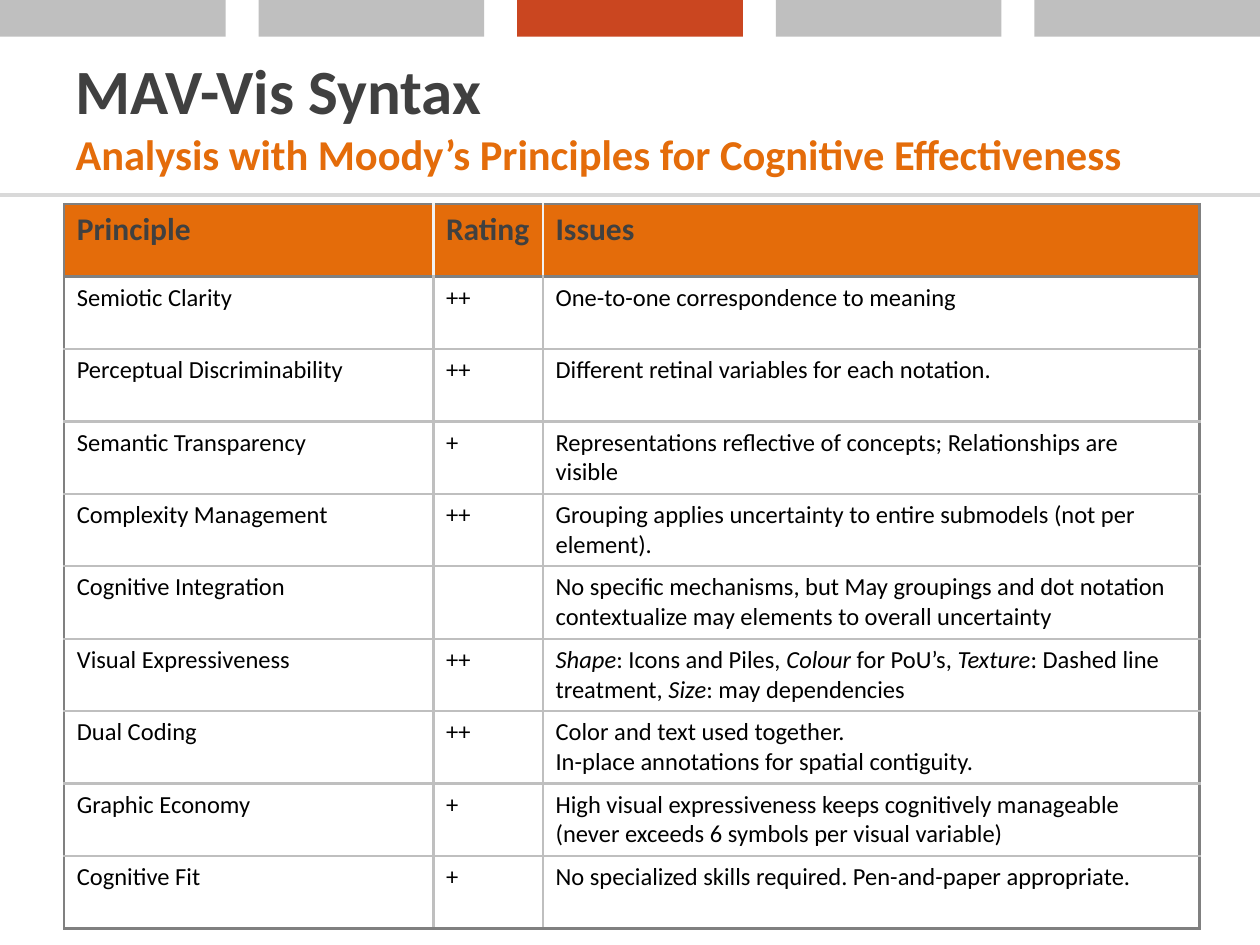
from lxml import etree
from pptx import Presentation
from pptx.dml.color import RGBColor
from pptx.enum.shapes import MSO_CONNECTOR, MSO_SHAPE
from pptx.enum.text import MSO_ANCHOR, PP_ALIGN
from pptx.oxml.ns import qn
from pptx.util import Inches, Pt

STRAIGHT = MSO_CONNECTOR.STRAIGHT
RECTANGLE = MSO_SHAPE.RECTANGLE
MIDDLE = MSO_ANCHOR.MIDDLE
LEFT = PP_ALIGN.LEFT

WHITE = RGBColor(0xFF, 0xFF, 0xFF)
BLACK = RGBColor(0x00, 0x00, 0x00)
DARK_GRAY = RGBColor(0x40, 0x40, 0x40)
FRAME_GRAY = RGBColor(0x80, 0x80, 0x80)
GRID_GRAY = RGBColor(0xBF, 0xBF, 0xBF)
RULE_GRAY = RGBColor(0xD9, 0xD9, 0xD9)
HEADER_GRAY = RGBColor(0xF2, 0xF2, 0xF2)
ORANGE = RGBColor(0xE4, 0x6C, 0x0A)
RED = RGBColor(0xCA, 0x46, 0x20)

# Asterisks enclose italic words; a newline starts a new paragraph.
ROWS = [
    ("Principle", "Rating", "Issues"),
    ("Semiotic Clarity", "++", "One-to-one correspondence to meaning"),
    ("Perceptual Discriminability", "++", "Different retinal variables for each notation."),
    ("Semantic Transparency", "+",
     "Representations reflective of concepts; Relationships are visible"),
    ("Complexity Management", "++",
     "Grouping applies uncertainty to entire submodels (not per element)."),
    ("Cognitive Integration", "",
     "No specific mechanisms, but May groupings and dot notation "
     "contextualize may elements to overall uncertainty"),
    ("Visual Expressiveness", "++",
     "*Shape*: Icons and Piles, *Colour* for PoU’s, *Texture*: Dashed line "
     "treatment, *Size*: may dependencies"),
    ("Dual Coding", "++",
     "Color and text used together.\nIn-place annotations for spatial contiguity."),
    ("Graphic Economy", "+",
     "High visual expressiveness keeps cognitively manageable "
     "(never exceeds 6 symbols per visual variable)"),
    ("Cognitive Fit", "+", "No specialized skills required. Pen-and-paper appropriate."),
]
COLUMN_WIDTHS = [2.93, 0.87, 5.21]
ROW_HEIGHT = 0.575


def add_span(para, text, color, **font_values):
    span = para.add_run()
    span.text = text
    span.font.name = "Calibri"
    span.font.color.rgb = color
    for name, value in font_values.items():
        setattr(span.font, name, value)


def add_border(cell, side, color):
    line = etree.SubElement(cell._tc.get_or_add_tcPr(), qn(f"a:ln{side}"), w=str(Pt(1.5)))
    fill = etree.SubElement(line, qn("a:solidFill"))
    etree.SubElement(fill, qn("a:srgbClr"), val=str(color))


deck = Presentation()
deck.slide_width = Inches(10)
deck.slide_height = Inches(7.5)
page = deck.slides.add_slide(deck.slide_layouts[5])

# Rule below the title and the bar of five blocks along the top
rule = page.shapes.add_connector(STRAIGHT, 0, Inches(1.55), Inches(10), Inches(1.55))
rule.line.color.rgb = RULE_GRAY
rule.line.width = Pt(2.25)
etree.SubElement(rule._element.spPr, qn("a:effectLst"))

for index, color in enumerate([GRID_GRAY, GRID_GRAY, RED, GRID_GRAY, GRID_GRAY]):
    block = page.shapes.add_shape(
        RECTANGLE, Inches(index * (10 - 1.79) / 4), 0, Inches(1.79), Inches(0.29))
    block.shadow.inherit = False
    block.fill.solid()
    block.fill.fore_color.rgb = color
    block.line.fill.background()

# Title
title = page.shapes.title
title_place = {"left": 0.5, "top": 0.29, "width": 9, "height": 1.25}
for name, value in title_place.items():
    setattr(title, name, Inches(value))
title.text_frame.vertical_anchor = MIDDLE
title.text_frame.word_wrap = True
para = title.text_frame.paragraphs[0]
para.alignment = LEFT
add_span(para, "MAV-Vis Syntax", DARK_GRAY, size=Pt(36), bold=True)
para.add_line_break()
add_span(para, "Analysis with Moody’s Principles for Cognitive Effectiveness", ORANGE,
         size=Pt(24.3), bold=True)

# Table of principles
table = page.shapes.add_table(
    len(ROWS), len(COLUMN_WIDTHS), Inches(0.51), Inches(1.62),
    Inches(sum(COLUMN_WIDTHS)), Inches(ROW_HEIGHT * len(ROWS))).table
for column, width in zip(table.columns, COLUMN_WIDTHS):
    column.width = Inches(width)

last_row, last_column = len(ROWS) - 1, len(COLUMN_WIDTHS) - 1
for row_index, row in enumerate(ROWS):
    table.rows[row_index].height = Inches(ROW_HEIGHT)
    is_header = row_index == 0
    inner_color = HEADER_GRAY if is_header else GRID_GRAY
    text_color = DARK_GRAY if is_header else BLACK
    text_size = Pt(18 if is_header else 14)

    for column_index, text in enumerate(row):
        cell = table.cell(row_index, column_index)
        borders = {
            "L": FRAME_GRAY if column_index == 0 else inner_color,
            "R": FRAME_GRAY if column_index == last_column else inner_color,
            "T": FRAME_GRAY if row_index <= 1 else GRID_GRAY,
            "B": FRAME_GRAY if row_index in (0, last_row) else GRID_GRAY,
        }
        for side, color in borders.items():
            add_border(cell, side, color)
        cell.fill.solid()
        cell.fill.fore_color.rgb = ORANGE if is_header else WHITE

        cell.text = text
        for para in cell.text_frame.paragraphs:
            parts = para.text.split("*")
            para.clear()
            para.font.size = text_size
            for part_index, part in enumerate(parts):
                if part:
                    add_span(para, part, text_color, size=text_size,
                             bold=is_header, italic=part_index % 2 == 1)

deck.save("out.pptx")
